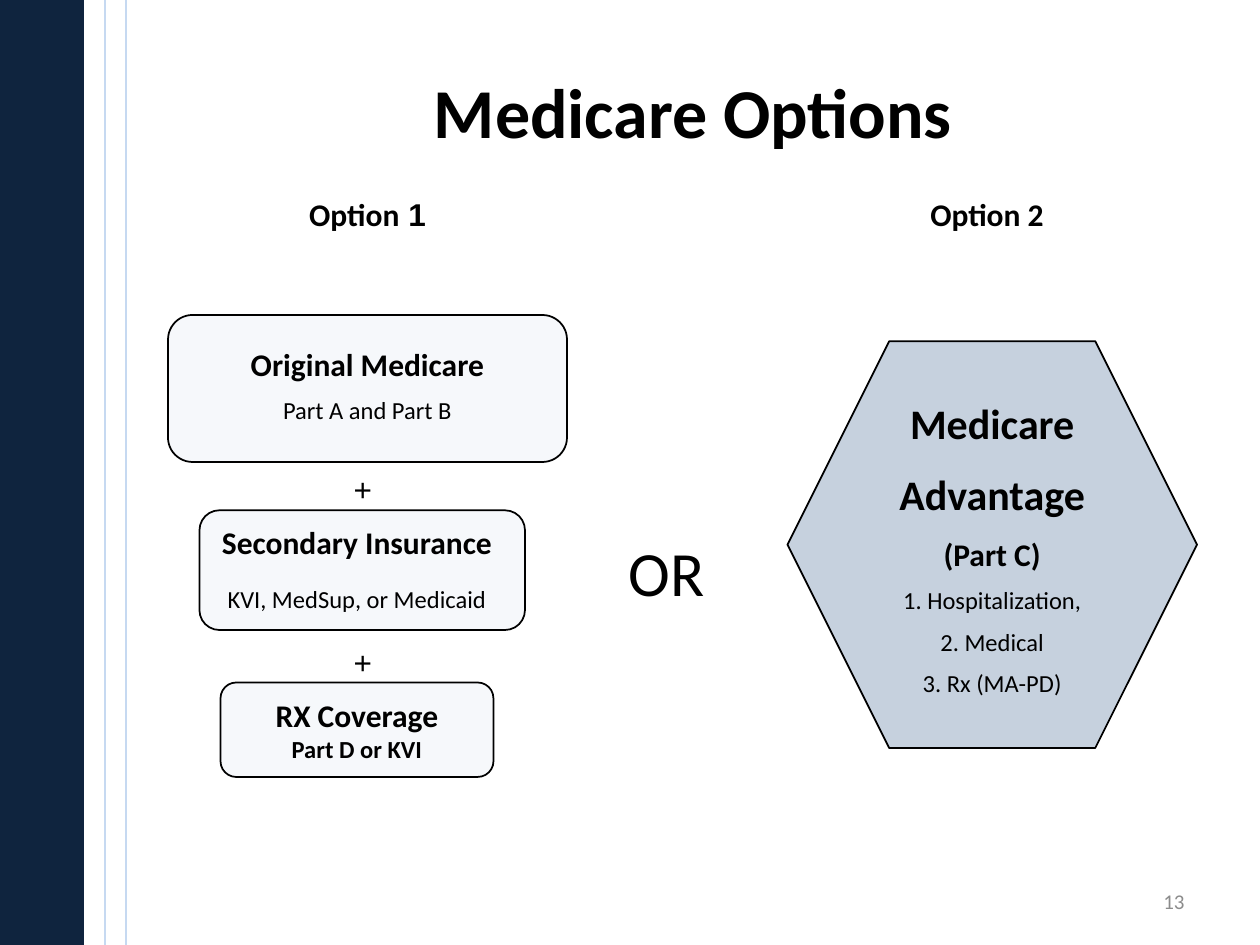
from pptx import Presentation
from pptx.dml.color import RGBColor
from pptx.enum.shapes import MSO_CONNECTOR as Connector, MSO_SHAPE as Shape
from pptx.enum.text import MSO_ANCHOR as Anchor, PP_ALIGN as Align
from pptx.oxml.ns import qn
from pptx.util import Inches, Pt
from lxml.etree import SubElement

COLORS = {"band": "0F243E", "rule": "C6D9F1", "box": "DCE6F2",
          "hexagon": "1F497D", "ink": "000000", "number": "8C8C8C"}

deck = Presentation()
deck.slide_width, deck.slide_height = Inches(10), Inches(7.5)
CELL = deck.slide_width / 120  # the slide is a grid of 120 columns by 90 rows
slide = deck.slides.add_slide(deck.slide_layouts[5])


def grid(*cells):
    return [round(cell * CELL) for cell in cells]


def write(holder, lines, align=Align.CENTER, anchor=Anchor.TOP, color="ink",
          inset=(0.1, 0.05), wrap=True):
    """Fill a text holder; each line is (space before, [(text, size, bold, font), ...])."""
    frame = holder.text_frame
    frame.word_wrap = wrap
    frame.vertical_anchor = anchor
    frame.margin_left = frame.margin_right = Inches(inset[0])
    frame.margin_top = frame.margin_bottom = Inches(inset[1])
    for index, (gap, pieces) in enumerate(lines):
        paragraph = frame.paragraphs[0] if index == 0 else frame.add_paragraph()
        paragraph.alignment = align
        paragraph.space_before = Pt(gap)
        for text, size, bold, font in pieces:
            run = paragraph.add_run()
            run.text = text
            run.font.size, run.font.bold, run.font.name = Pt(size), bold, font
            run.font.color.rgb = RGBColor.from_string(COLORS[color])


# Side band and its two thin rules
band = slide.shapes.add_shape(Shape.RECTANGLE, *grid(0, 0, 8, 90))
band.shadow.inherit = False
band.fill.solid()
band.fill.fore_color.rgb = RGBColor.from_string(COLORS["band"])
band.line.fill.background()
for column in (12, 10):
    rule = slide.shapes.add_connector(Connector.STRAIGHT, *grid(column, 0, column, 90))
    rule.line.color.rgb = RGBColor.from_string(COLORS["rule"])
    rule.line.width = Pt(0.75)
    SubElement(rule._element.spPr, qn("a:effectLst"))

title = slide.shapes.title
title.left, title.top, title.width, title.height = grid(20, 3, 92, 15)
write(title, [(0, [("Medicare Options", 40, True, "Calibri")])], anchor=Anchor.MIDDLE)

# Outlined boxes with a quarter-strength fill
OUTLINES = [
    (Shape.ROUNDED_RECTANGLE, "box", (16, 30, 38, 14)),
    (Shape.ROUNDED_RECTANGLE, "box", (19, 48.6, 31, 11.4)),
    (Shape.ROUNDED_RECTANGLE, "box", (21, 65, 26, 9)),
    (Shape.HEXAGON, "hexagon", (75, 32.5, 39, 38.75)),
]
for preset, color, place in OUTLINES:
    outline = slide.shapes.add_shape(preset, *grid(*place))
    outline.shadow.inherit = False
    outline.fill.solid()
    outline.fill.fore_color.rgb = RGBColor.from_string(COLORS[color])
    tint = outline._element.spPr.find(qn("a:solidFill"))[0]
    SubElement(tint, qn("a:alpha"), val="25000")
    outline.line.color.rgb = RGBColor.from_string(COLORS["ink"])
    outline.line.width = Pt(1)
    if preset == Shape.ROUNDED_RECTANGLE:
        outline.adjustments[0] = 0.167
    if place[1] == 65:
        write(outline, [(0, [("RX Coverage", 18, True, "Calibri")]),
                        (0, [("Part D or KVI", 14, True, "Calibri")])],
              anchor=Anchor.MIDDLE, inset=(0.14, 0.07), wrap=False)

# Option headings
for column, pieces in [
    (21, [("Option", 18, True, "Calibri"), (" 1", 18, True, "Arial")]),
    (80, [("Option 2", 18, True, "Calibri")]),
]:
    heading = slide.shapes.add_textbox(*grid(column, 18, 28, 4.8))
    write(heading, [(0, pieces)])

# Coverage descriptions: (space before, text, size, bold)
DESCRIPTIONS = [
    ((20, 32, 30, 9.6), [(0, "Original Medicare", 18, True),
                         (7, "Part A and Part B", 14, False)]),
    ((18, 49, 32, 10.8), [(0, "Secondary Insurance", 18, True),
                          (13, "KVI, MedSup, or Medicaid", 14, False)]),
    ((80, 37, 29, 32), [(0, "Medicare", 24, True),
                        (12, "Advantage", 24, True),
                        (9, "(Part C)", 18, True),
                        (7, "1. Hospitalization,", 14, False),
                        (7, "2. Medical", 14, False),
                        (7, "3. Rx (MA-PD)", 14, False)]),
]
for place, lines in DESCRIPTIONS:
    description = slide.shapes.add_textbox(*grid(*place))
    write(description, [(gap, [(text, size, bold, "Calibri")])
                        for gap, text, size, bold in lines], inset=(0.14, 0.07))

# Joining signs and page number
for row in (43.9, 60.4):
    plus = slide.shapes.add_textbox(*grid(32, row, 5, 4.6))
    write(plus, [(0, [("+", 18, False, "Arial")])], align=Align.LEFT, inset=(0.14, 0.07))

either = slide.shapes.add_textbox(*grid(55, 50.2, 17, 7.9))
write(either, [(0, [("OR", 36, False, "Calibri")])], wrap=False)

page = slide.shapes.add_textbox(*grid(86, 83.4, 28, 4.8))
write(page, [(0, [("13", 12, False, "Calibri")])], align=Align.RIGHT,
      anchor=Anchor.MIDDLE, color="number")

deck.save("out.pptx")
